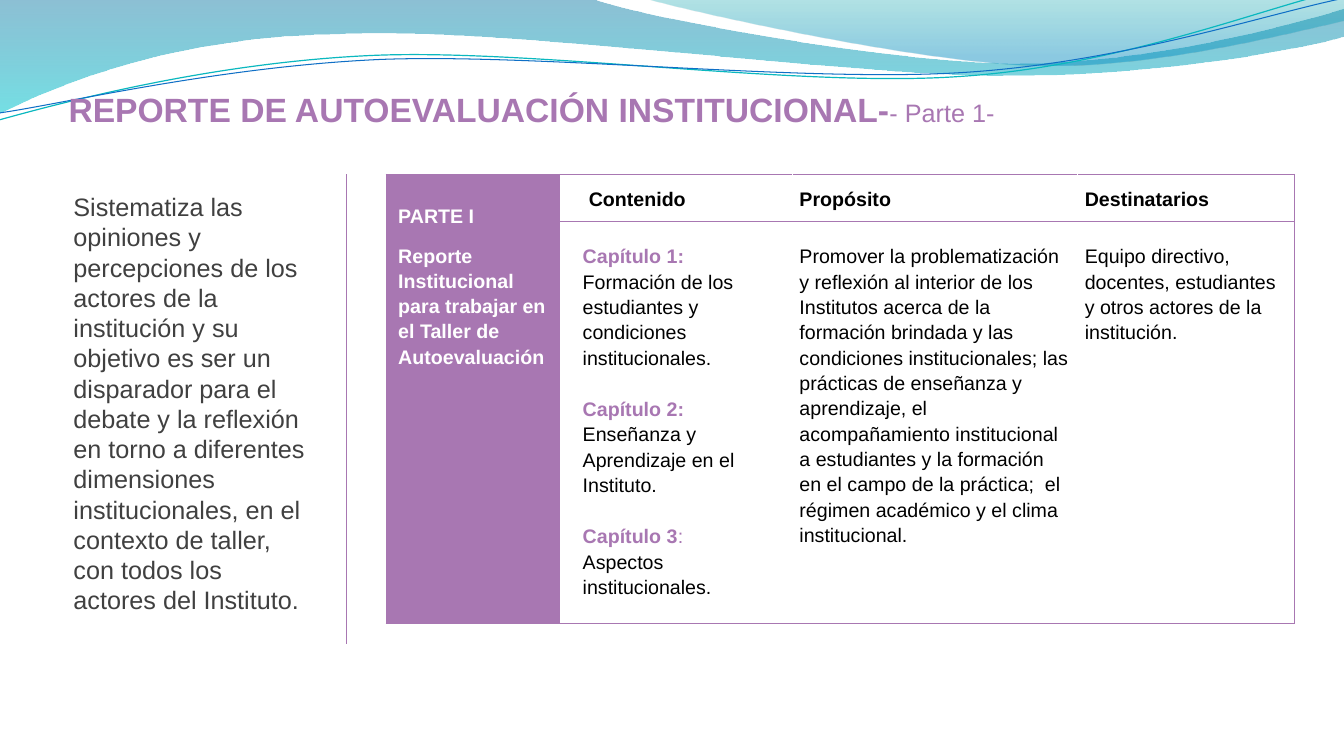
from lxml import etree
from pptx import Presentation
from pptx.dml.color import RGBColor
from pptx.enum.shapes import MSO_CONNECTOR
from pptx.enum.text import MSO_ANCHOR as Anchor
from pptx.oxml import parse_xml
from pptx.oxml.ns import nsdecls, qn
from pptx.util import Inches, Pt

PURPLE, WHITE, BLACK, GRAY = "A877B2", "FFFFFF", "000000", "404040"

# Each wave: start point, then lines (one point) and Bézier curves (three points).
LEFT_WAVE = [(0, 0), [(5.87, -0.01)],
             [(6.34, 0.17), (8.85, 0.63), (10.11, 0.63)],
             [(11.38, 0.63), (12.78, 0.26), (13.33, 0.09)],
             [(13.35, 0.36)],
             [(13.11, 0.44), (11.6, 0.76), (9.94, 0.75)],
             [(8.29, 0.75), (5.09, 0.28), (3.43, 0.34)],
             [(1.72, 0.36), (0.61, 0.83), (-0.01, 1.13)]]
RIGHT_WAVE = [(6.39, -0.01),
              [(6.79, 0.11), (9.09, 0.62), (10.25, 0.65)],
              [(11.41, 0.69), (12.82, 0.32), (13.33, 0.21)],
              [(13.33, 0)]]
TEAL_CURVE = [(-0.01, 1.19),
              [(0.64, 1.01), (2.11, 0.62), (3.69, 0.55)],
              [(5.27, 0.48), (7.9, 0.87), (9.5, 0.76)],
              [(11.1, 0.66), (12.52, 0.08), (13.31, -0.1)]]
BLUE_CURVE = [(0, 1.12),
              [(0.63, 1.03), (2.18, 0.66), (3.78, 0.59)],
              [(5.37, 0.53), (7.96, 0.82), (9.55, 0.72)],
              [(11.15, 0.62), (12.55, 0.14), (13.34, -0.02)]]

INTRO = ("Sistematiza las opiniones y percepciones de los actores de la institución y su "
         "objetivo es ser un disparador para el debate y la reflexión en torno a diferentes "
         "dimensiones institucionales, en el contexto de taller, con todos los actores del "
         "Instituto.")
PURPOSE = ("Promover la problematización y reflexión al interior de los Institutos acerca de la "
           "formación brindada y las condiciones institucionales; las prácticas de enseñanza y "
           "aprendizaje, el acompañamiento institucional a estudiantes y la formación en el "
           "campo de la práctica;  el régimen académico y el clima institucional.")
AUDIENCE = "Equipo directivo, docentes, estudiantes y otros actores de la institución."
CHAPTERS = [
    [("Capítulo 1:", PURPLE, True)],
    [("Formación de los estudiantes y condiciones institucionales.", BLACK, False)],
    [("Capítulo 2:", PURPLE, True)],
    [("Enseñanza y Aprendizaje en el Instituto.", BLACK, False)],
    [("Capítulo 3", PURPLE, True), (":", PURPLE, False)],
    [("Aspectos institucionales.", BLACK, False)],
]


def rgb(color):
    return RGBColor.from_string(color)


def add_wave(slide, wave, closed):
    """Draw the wave's points as lines, then join each group of three into one curve."""
    start, *segments = wave
    builder = slide.shapes.build_freeform(Inches(start[0]), Inches(start[1]))
    points = [(Inches(x), Inches(y)) for segment in segments for x, y in segment]
    builder.add_line_segments(points, close=closed)
    shape = builder.convert_to_shape()
    shape.shadow.inherit = False
    lines = shape.element.iter(qn("a:lnTo"))
    steps = iter(list(lines))
    for segment in segments:
        group = [next(steps) for _ in segment]
        if len(group) == 3:
            curve = etree.Element(qn("a:cubicBezTo"))
            group[0].addprevious(curve)
            for step in group:
                curve.append(step[0])
                step.getparent().remove(step)
    return shape


def add_filled_wave(slide, wave, stops):
    """Stops are (position %, colour, opacity %), from top to bottom."""
    shape = add_wave(slide, wave, closed=True)
    shape.line.fill.background()
    marks = "".join(f'<a:gs pos="{pos * 1000}"><a:srgbClr val="{color}">'
                    f'<a:alpha val="{opacity * 1000}"/></a:srgbClr></a:gs>'
                    for pos, color, opacity in stops)
    gradient = parse_xml(f'<a:gradFill {nsdecls("a")} rotWithShape="1"><a:gsLst>{marks}</a:gsLst>'
                         '<a:lin ang="5400000" scaled="0"/></a:gradFill>')
    shape.element.spPr.find(qn("a:custGeom")).addnext(gradient)


def add_curve(slide, wave, color, width):
    shape = add_wave(slide, wave, closed=False)
    shape.fill.background()
    shape.line.color.rgb = rgb(color)
    shape.line.width = Pt(width)


def add_span(para, text, size, color, bold=False):
    span = para.add_run()
    span.text = text
    span.font.name = "Arial"
    span.font.size = Pt(size)
    span.font.bold = bold
    span.font.color.rgb = rgb(color)


def add_text(slide, left, top, width, height):
    box = slide.shapes.add_textbox(Inches(left), Inches(top), Inches(width), Inches(height))
    box.text_frame.word_wrap = True
    return box.text_frame


def add_divider(slide, x, top, bottom):
    line = slide.shapes.add_connector(MSO_CONNECTOR.STRAIGHT, Inches(x), Inches(top),
                                      Inches(x), Inches(bottom))
    line.line.color.rgb = rgb(PURPLE)
    line.line.width = Pt(0.75)
    etree.SubElement(line.element.spPr, qn("a:effectLst"))


def set_borders(cell, left, right):
    properties = cell._tc.get_or_add_tcPr()
    sides = {"lnL": left, "lnR": right, "lnT": PURPLE, "lnB": PURPLE}
    for place, (side, color) in enumerate(sides.items()):
        properties.insert(place, parse_xml(
            f'<a:{side} {nsdecls("a")} w="12700"><a:solidFill><a:srgbClr val="{color}"/>'
            f'</a:solidFill></a:{side}>'))


def set_margins(cell, left=0.07, top=0):
    cell.margin_left, cell.margin_top = Inches(left), Inches(top)
    cell.margin_right, cell.margin_bottom = Inches(0.07), 0


def write_cell(cell, paragraphs, space_after=0):
    """Each paragraph is a list of (text, colour, bold) spans."""
    frame = cell.text_frame
    for number, spans in enumerate(paragraphs):
        para = frame.add_paragraph() if number else frame.paragraphs[0]
        para.line_spacing = 1.15
        para.space_after = Pt(space_after)
        for text, color, bold in spans:
            add_span(para, text, 14, color, bold)


def add_report_table(slide):
    widths, heights = (1.72, 2.31, 2.83, 2.15), (0.47, 3.99)
    table = slide.shapes.add_table(2, 4, Inches(3.83), Inches(1.73), Inches(sum(widths)),
                                   Inches(sum(heights))).table
    table.first_row = table.horz_banding = False
    for column, width in zip(table.columns, widths):
        column.width = Inches(width)
    for row, height in zip(table.rows, heights):
        row.height = Inches(height)
        for number, cell in enumerate(row.cells):
            if number == 0:
                cell.fill.solid()
                cell.fill.fore_color.rgb = rgb(PURPLE)
            else:
                cell.fill.background()
            set_borders(cell, PURPLE if number < 2 else WHITE,
                        PURPLE if number in (0, 3) else WHITE)

    part = table.cell(0, 0)
    part.merge(table.cell(1, 0))
    set_margins(part, 0.12, 0.28)
    titles = ("PARTE I", "Reporte Institucional para trabajar en el Taller de Autoevaluación")
    write_cell(part, [[(title, WHITE, True)] for title in titles], space_after=10)

    for number, heading in enumerate(("Contenido", "Propósito", "Destinatarios"), 1):
        cell = table.cell(0, number)
        cell.vertical_anchor = Anchor.MIDDLE
        set_margins(cell, 0.29 if number == 1 else 0.07)
        write_cell(cell, [[(heading, BLACK, True)]])

    contents = (CHAPTERS, [[(PURPOSE, BLACK, False)]], [[(AUDIENCE, BLACK, False)]])
    for number, paragraphs in enumerate(contents, 1):
        cell = table.cell(1, number)
        set_margins(cell, 0.23 if number == 1 else 0.07, 0.21)
        write_cell(cell, paragraphs)
    for para in table.cell(1, 1).text_frame.paragraphs[2::2]:
        para.space_before = Pt(18.5)


def main():
    deck = Presentation()
    deck.slide_width, deck.slide_height = Inches(13.33), Inches(7.5)
    slide = deck.slides.add_slide(deck.slide_layouts[6])

    add_filled_wave(slide, LEFT_WAVE, [(0, "0074A1", 45), (100, "00C6CF", 55)])
    add_filled_wave(slide, RIGHT_WAVE, [(0, "00A1A9", 30), (80, "008BBF", 45)])
    add_curve(slide, TEAL_CURVE, "0AB8BF", 0.85)
    add_curve(slide, BLUE_CURVE, "0F6FC6", 0.75)
    add_report_table(slide)

    title = add_text(slide, 0.68, 0.82, 9.6, 0.46)
    title.vertical_anchor = Anchor.BOTTOM
    title.margin_left = title.margin_right = title.margin_bottom = 0
    add_span(title.paragraphs[0], "REPORTE DE AUTOEVALUACIÓN INSTITUCIONAL-", 24, PURPLE, True)
    add_span(title.paragraphs[0], "- Parte 1-", 18, PURPLE)

    intro = add_text(slide, 0.63, 1.85, 2.51, 4.34)
    add_span(intro.paragraphs[0], INTRO, 18, GRAY)
    add_divider(slide, 3.44, 1.73, 6.39)
    deck.save("out.pptx")


if __name__ == "__main__":
    main()
